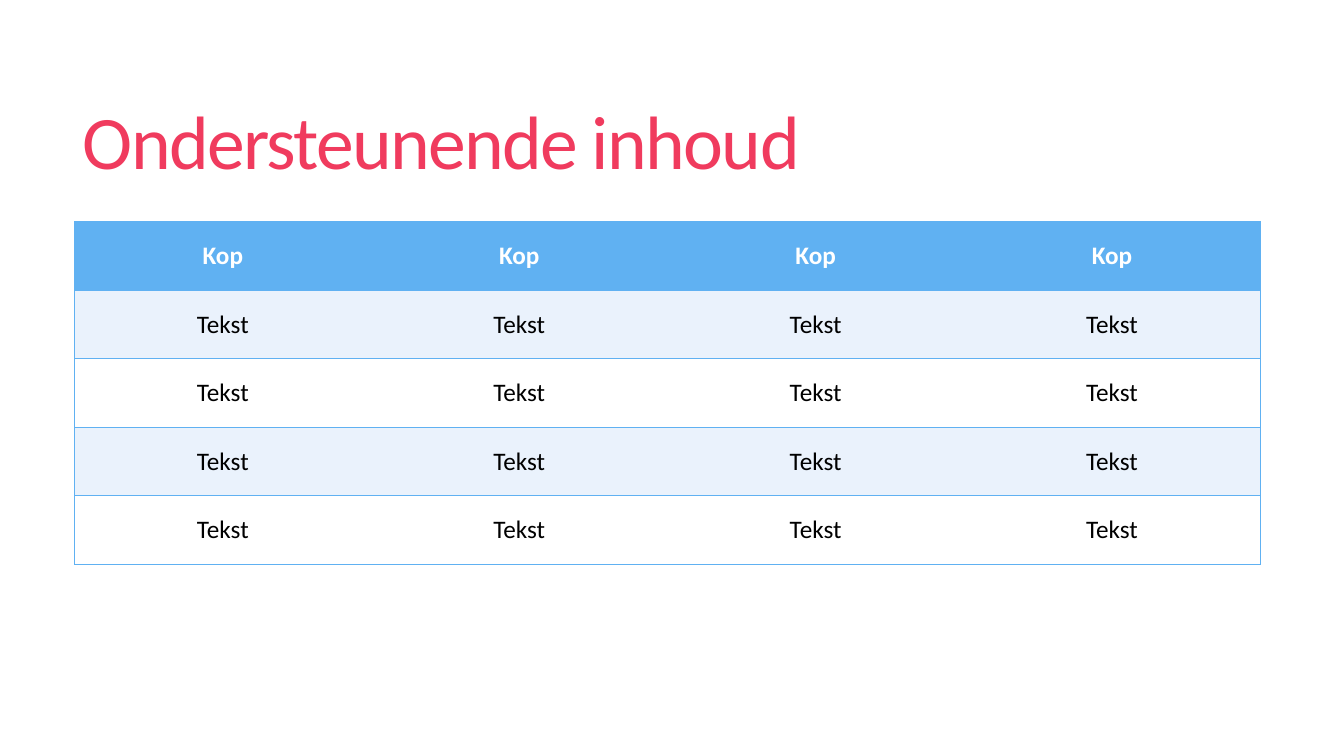
import dataclasses

import pptx
import pptx.dml.color
import pptx.enum.text
import pptx.oxml.ns
import pptx.slide
import pptx.table
import pptx.text.text
import pptx.util
from lxml import etree

Inches = pptx.util.Inches
FONT = "Calibri"
COLORS = {
    "title": "F03B5E",
    "accent": "60B1F2",
    "band": "EAF2FC",
    "white": "FFFFFF",
    "text": "000000",
}
COLUMNS = 4
COLUMN_WIDTH = 2.94
ROW_HEIGHT = 0.68


@dataclasses.dataclass(frozen=True)
class TableRow:
    label: str
    fill: str
    color: str = "text"
    bold: bool = False


ROWS = [TableRow("Kop", "accent", "white", True)] + [
    TableRow("Tekst", fill) for fill in ("band", "white") * 2
]


def rgb(name: str) -> pptx.dml.color.RGBColor:
    return pptx.dml.color.RGBColor.from_string(COLORS[name])


def format_run(r: pptx.text.text._Run, size: float, color: str, bold: bool = False) -> None:
    r.font.name = FONT
    r.font.size = pptx.util.Pt(size)
    r.font.bold = bold
    r.font.color.rgb = rgb(color)


def add_border(cell: pptx.table._Cell, side: str, visible: bool) -> None:
    qn = pptx.oxml.ns.qn
    tc_pr = cell._tc.get_or_add_tcPr()
    width = pptx.util.Pt(1) if visible else 0
    ln = etree.SubElement(tc_pr, qn(f"a:ln{side}"), w=str(width))
    if visible:
        fill = etree.SubElement(ln, qn("a:solidFill"))
        etree.SubElement(fill, qn("a:srgbClr"), val=COLORS["accent"])
    else:
        etree.SubElement(ln, qn("a:noFill"))


def format_cell(cell: pptx.table._Cell, row: TableRow, column: int) -> None:
    borders = {"L": column == 0, "R": column == COLUMNS - 1, "T": True, "B": True}
    for side, visible in borders.items():
        add_border(cell, side, visible)
    cell.fill.solid()
    cell.fill.fore_color.rgb = rgb(row.fill)
    cell.vertical_anchor = pptx.enum.text.MSO_ANCHOR.MIDDLE
    cell.text_frame.text = row.label
    p = cell.text_frame.paragraphs[0]
    p.alignment = pptx.enum.text.PP_ALIGN.CENTER
    format_run(p.runs[0], 18, row.color, row.bold)


def add_title(s: pptx.slide.Slide, text: str) -> None:
    sp = s.shapes.title
    sp.left, sp.top = Inches(0.72), Inches(0.55)
    sp.width, sp.height = Inches(11.78), Inches(1.81)
    tf = sp.text_frame
    tf.text = text
    tf.word_wrap = True
    tf.vertical_anchor = pptx.enum.text.MSO_ANCHOR.MIDDLE
    p = tf.paragraphs[0]
    p.alignment = pptx.enum.text.PP_ALIGN.LEFT
    p.line_spacing = 0.85
    r = p.runs[0]
    format_run(r, 54, "title")
    r._r.get_or_add_rPr().set("spc", "-120")


def add_content_table(s: pptx.slide.Slide) -> None:
    table = s.shapes.add_table(
        len(ROWS), COLUMNS, Inches(0.74), Inches(2.2),
        Inches(COLUMN_WIDTH * COLUMNS), Inches(ROW_HEIGHT * len(ROWS)),
    ).table
    for i, row in enumerate(ROWS):
        for j in range(COLUMNS):
            format_cell(table.cell(i, j), row, j)


def main() -> None:
    prs = pptx.Presentation()
    prs.slide_width, prs.slide_height = Inches(13.33), Inches(7.5)
    s = prs.slides.add_slide(prs.slide_layouts[5])
    add_title(s, "Ondersteunende inhoud")
    add_content_table(s)
    prs.save("out.pptx")


if __name__ == "__main__":
    main()
